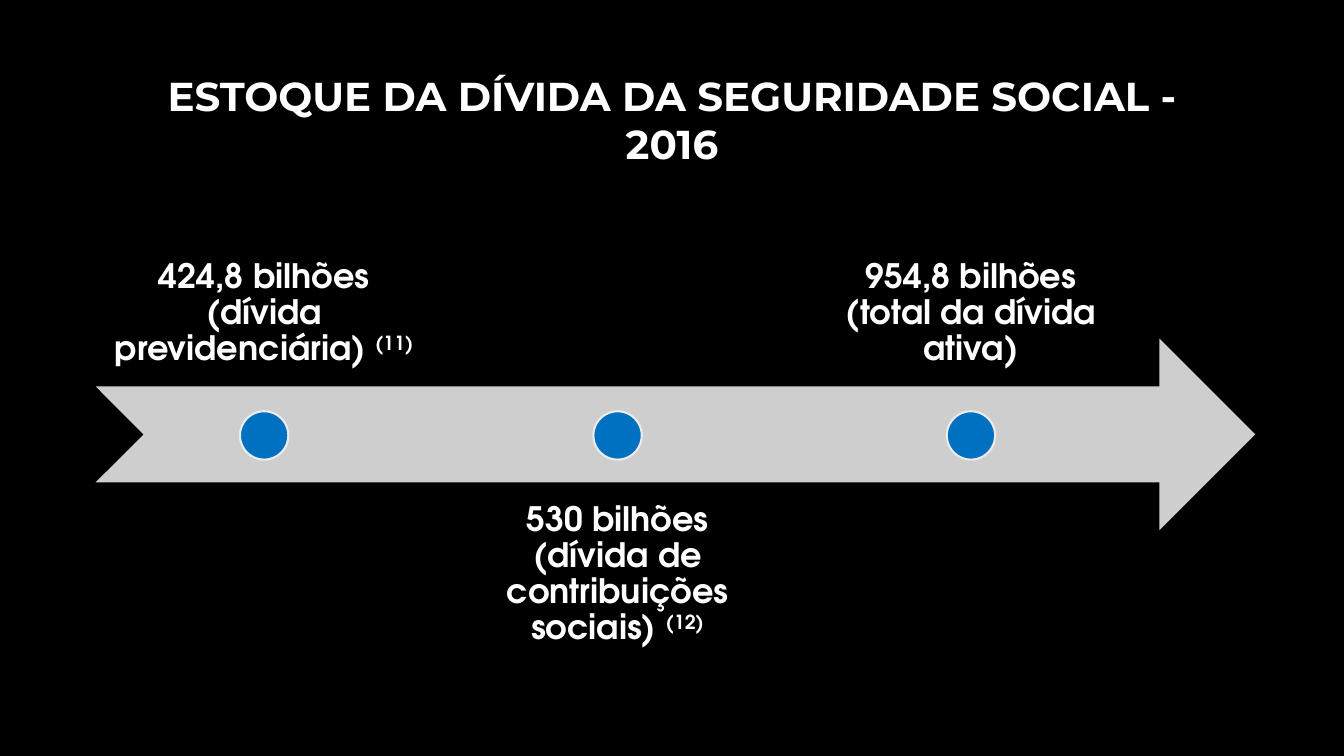
from dataclasses import dataclass

from pptx import Presentation
from pptx.dml.color import RGBColor
from pptx.enum.shapes import MSO_SHAPE
from pptx.enum.text import MSO_ANCHOR, PP_ALIGN
from pptx.shapes.autoshape import Shape
from pptx.slide import Slide
from pptx.util import Inches, Pt

BLACK, WHITE, GREY = "000000", "FFFFFF", "CECECF"
BLUE, PALE_GREY = "0070C0", "EBEBEB"
TITLE_FONT, LABEL_FONT = "Montserrat", "TeX Gyre Adventor"

LABEL_LEFT, LABEL_STEP = 0.95, 3.505
LABEL_WIDTH, LABEL_HEIGHT, LABEL_INSET = 3.34, 1.9, 0.19
UPPER_TOP, LOWER_TOP = 1.94, 4.79
DOT_TOP, DOT_SIZE = 4.08, 0.48


@dataclass
class Milestone:
    text: str
    note: str = ""
    above: bool = True


MILESTONES = [
    Milestone("424,8 bilhões (dívida previdenciária) ", "(11)"),
    Milestone("530 bilhões (dívida de contribuições sociais) ", "(12)", above=False),
    Milestone("954,8 bilhões (total da dívida ativa)"),
]


def color(value: str) -> RGBColor:
    return RGBColor.from_string(value)


def add_text(slide: Slide, left: float, top: float, width: float, height: float,
             text: str, font_name: str, size: float, anchor: MSO_ANCHOR) -> Shape:
    """Add a box holding one centred, bold, white paragraph."""
    box = slide.shapes.add_textbox(Inches(left), Inches(top), Inches(width), Inches(height))
    box.text_frame.word_wrap = True
    box.text_frame.vertical_anchor = anchor
    paragraph = box.text_frame.paragraphs[0]
    paragraph.alignment = PP_ALIGN.CENTER
    paragraph.font.name = font_name
    paragraph.font.size = Pt(size)
    paragraph.font.bold = True
    paragraph.font.color.rgb = color(WHITE)
    paragraph.add_run().text = text
    return box


def add_filled_shape(slide: Slide, kind: MSO_SHAPE, left: float, top: float,
                     width: float, height: float, fill: str) -> Shape:
    shape = slide.shapes.add_shape(kind, Inches(left), Inches(top), Inches(width), Inches(height))
    shape.shadow.inherit = False
    shape.fill.solid()
    shape.fill.fore_color.rgb = color(fill)
    shape.line.fill.background()
    return shape


def add_milestone(slide: Slide, milestone: Milestone, left: float) -> None:
    """Add a label above or below the arrow, and its dot on the arrow."""
    top, anchor = (UPPER_TOP, MSO_ANCHOR.BOTTOM) if milestone.above else (LOWER_TOP, MSO_ANCHOR.TOP)
    label = add_text(slide, left, top, LABEL_WIDTH, LABEL_HEIGHT,
                     milestone.text, LABEL_FONT, 24, anchor)
    frame = label.text_frame
    frame.margin_left = frame.margin_right = Inches(LABEL_INSET)
    frame.margin_top = frame.margin_bottom = Inches(LABEL_INSET)
    paragraph = frame.paragraphs[0]
    paragraph.line_spacing = 0.9
    if milestone.note:
        note = paragraph.add_run()
        note.text = milestone.note
        note._r.get_or_add_rPr().set("baseline", "30000")

    dot_left = left + (LABEL_WIDTH - DOT_SIZE) / 2
    dot = add_filled_shape(slide, MSO_SHAPE.OVAL, dot_left, DOT_TOP, DOT_SIZE, DOT_SIZE, BLUE)
    dot.line.color.rgb = color(PALE_GREY)
    dot.line.width = Pt(1.5)


def main() -> None:
    presentation = Presentation()
    presentation.slide_width = Inches(13.33)
    presentation.slide_height = Inches(7.5)
    slide = presentation.slides.add_slide(presentation.slide_layouts[6])
    slide.background.fill.solid()
    slide.background.fill.fore_color.rgb = color(BLACK)

    add_text(slide, 1.25, 0.67, 10.83, 1.03, "ESTOQUE DA DÍVIDA DA SEGURIDADE SOCIAL - 2016",
             TITLE_FONT, 28.8, MSO_ANCHOR.MIDDLE)
    add_filled_shape(slide, MSO_SHAPE.NOTCHED_RIGHT_ARROW, 0.95, 3.36, 11.5, 1.9, GREY)
    for index, milestone in enumerate(MILESTONES):
        add_milestone(slide, milestone, LABEL_LEFT + index * LABEL_STEP)

    presentation.save("out.pptx")


if __name__ == "__main__":
    main()
